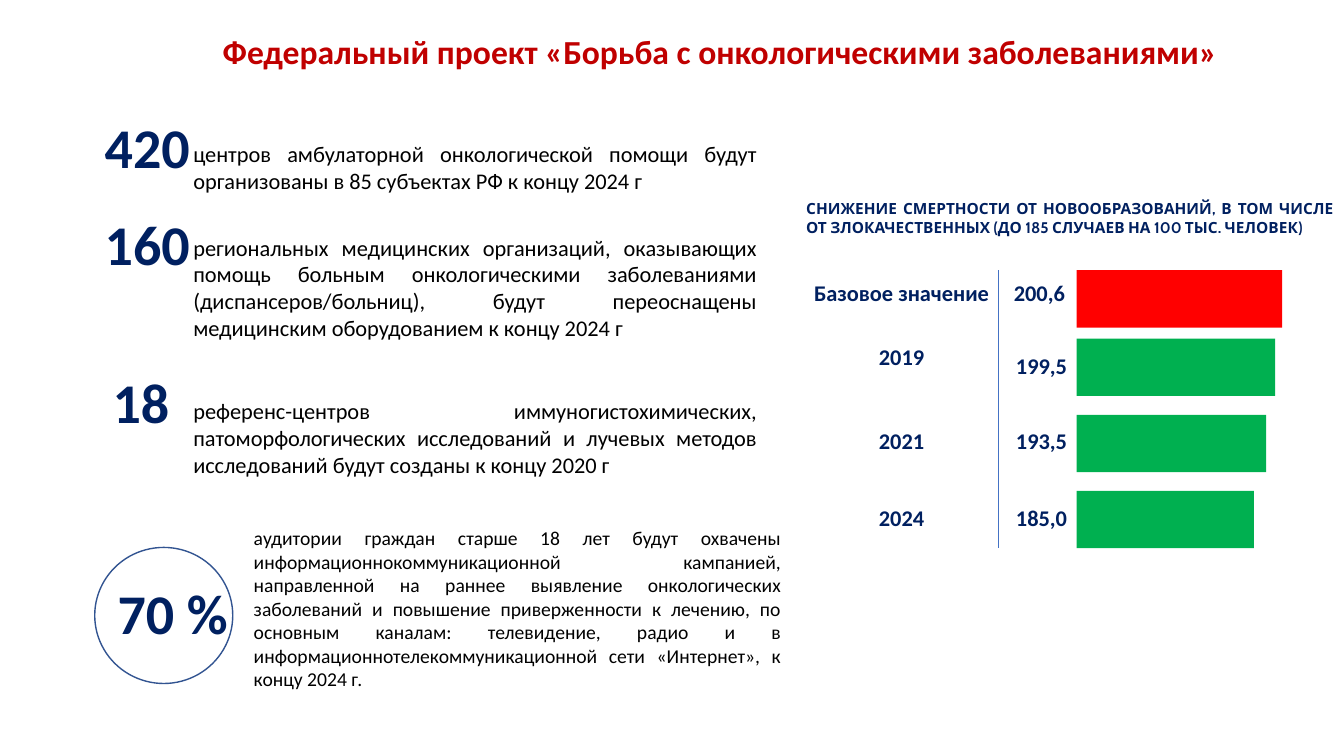
from lxml import etree
from pptx import Presentation
from pptx.dml.color import RGBColor
from pptx.enum.shapes import MSO_CONNECTOR, MSO_SHAPE
from pptx.enum.text import MSO_ANCHOR, MSO_AUTO_SIZE, PP_ALIGN
from pptx.oxml.ns import qn
from pptx.util import Pt

LEFT, CENTER, JUSTIFY = PP_ALIGN.LEFT, PP_ALIGN.CENTER, PP_ALIGN.JUSTIFY
TOP = MSO_ANCHOR.TOP
NO_AUTOFIT = MSO_AUTO_SIZE.NONE
RECTANGLE, CIRCLE = MSO_SHAPE.RECTANGLE, MSO_SHAPE.FLOWCHART_CONNECTOR
STRAIGHT = MSO_CONNECTOR.STRAIGHT

NAVY, BLACK, CRIMSON = "002060", "000000", "C00000"
RED, GREEN, BLUE, RING = "FF0000", "00B050", "4472C4", "325491"


def color(value):
    return RGBColor.from_string(value)


class SlideBuilder:
    """Places styled elements on the current slide, with lengths in points."""

    def __init__(self, slide, font="Calibri"):
        self.slide = slide
        self.font = font

    def set_words(self, box, words, size, ink, bold, align, font=None, wrap=True):
        frame = box.text_frame
        frame.text = words
        frame.word_wrap = wrap
        frame.auto_size = NO_AUTOFIT
        frame.vertical_anchor = TOP
        paragraph = frame.paragraphs[0]
        paragraph.alignment = align
        paragraph.line_spacing = 1.0
        paragraph.font.name = font or self.font
        paragraph.font.size = Pt(size)
        paragraph.font.bold = bold
        paragraph.font.color.rgb = color(ink)

    def title(self, words, left, top, width, height):
        heading = self.slide.shapes.title
        heading.left, heading.top = Pt(left), Pt(top)
        heading.width, heading.height = Pt(width), Pt(height)
        self.set_words(heading, words, 24, CRIMSON, True, CENTER)

    def text(self, words, left, top, width, height, size=16, ink=NAVY,
             bold=True, align=LEFT, font=None, wrap=True):
        box = self.slide.shapes.add_textbox(Pt(left), Pt(top), Pt(width), Pt(height))
        self.set_words(box, words, size, ink, bold, align, font, wrap)

    def shape(self, kind, left, top, width, height, fill=None, outline=None):
        figure = self.slide.shapes.add_shape(kind, Pt(left), Pt(top), Pt(width), Pt(height))
        figure.shadow.inherit = False
        if fill:
            figure.fill.solid()
            figure.fill.fore_color.rgb = color(fill)
        else:
            figure.fill.background()
        if outline:
            figure.line.color.rgb = color(outline)
            figure.line.width = Pt(1)
        else:
            figure.line.fill.background()

    def vertical_line(self, x, top, bottom):
        axis = self.slide.shapes.add_connector(STRAIGHT, Pt(x), Pt(top), Pt(x), Pt(bottom))
        axis.line.color.rgb = color(BLUE)
        axis.line.width = Pt(0.5)
        etree.SubElement(axis.element.spPr, qn("a:effectLst"))


def add_goals(builder):
    goals = [
        ("420", 67.7, 77, 84, "центров амбулаторной онкологической помощи будут "
         "организованы в 85 субъектах РФ к концу 2024 г", 96.5, 46),
        ("160", 67.7, 146.2, 84, "региональных медицинских организаций, оказывающих "
         "помощь больным онкологическими заболеваниями (диспансеров/больниц), "
         "будут переоснащены медицинским оборудованием к концу 2024 г", 163.4, 85),
        ("18", 73.4, 259.2, 55.4, "референс-центров иммуногистохимических, "
         "патоморфологических исследований и лучевых методов исследований "
         "будут созданы к концу 2020 г", 280.1, 65.5),
    ]
    for number, left, number_top, width, goal, goal_top, height in goals:
        builder.text(goal, 131, goal_top, 416.9, height, ink=BLACK, bold=False, align=JUSTIFY)
        builder.text(number, left, number_top, width, 55.4, size=40, align=JUSTIFY)


def add_audience(builder):
    builder.text(
        "аудитории граждан старше 18 лет будут охвачены информационнокоммуникационной "
        "кампанией, направленной на раннее выявление онкологических заболеваний и "
        "повышение приверженности к лечению, по основным каналам: телевидение, радио и "
        "в информационнотелекоммуникационной сети «Интернет», к концу 2024 г.",
        174.2, 372.2, 391, 126, size=14, ink=BLACK, bold=False, align=JUSTIFY)
    builder.shape(CIRCLE, 67.7, 391, 98.6, 97.2, outline=RING)
    builder.text("70 %", 77, 409.7, 93.6, 55.4, size=40, wrap=False)


def add_mortality(builder):
    builder.text("СНИЖЕНИЕ СМЕРТНОСТИ ОТ НОВООБРАЗОВАНИЙ, В ТОМ ЧИСЛЕ ОТ ЗЛОКАЧЕСТВЕННЫХ "
                 "(ДО 185 СЛУЧАЕВ НА 100 ТЫС. ЧЕЛОВЕК)",
                 568.8, 139, 391, 47.5, size=11, align=JUSTIFY, font="Cabin")
    years = [
        ("Базовое значение", "200,6", 193, 195.8, 195.8, 717.1, 146.9, RED),
        ("2019", "199,5", 241.9, 241.9, 247.7, 718.6, 141.8, GREEN),
        ("2021", "193,5", 296.3, 301.7, 301.7, 718.6, 135.4, GREEN),
        ("2024", "185,0", 350.6, 356.4, 356.4, 718.6, 126.7, GREEN),
    ]
    for year, rate, bar_top, year_top, rate_top, rate_left, length, fill in years:
        builder.shape(RECTANGLE, 769, bar_top, length, 41, fill=fill)
        builder.text(year, 568, year_top, 152, 26.6, align=CENTER)
        builder.text(rate, rate_left, rate_top, 51.8, 26.6, wrap=False)
    builder.vertical_line(712.8, 193, 391.7)


def main():
    deck = Presentation()
    deck.slide_width, deck.slide_height = Pt(960), Pt(540)
    builder = SlideBuilder(deck.slides.add_slide(deck.slide_layouts[5]))
    builder.title("Федеральный проект «Борьба с онкологическими заболеваниями»",
                  128.9, 18.7, 771, 36)
    add_mortality(builder)
    add_goals(builder)
    add_audience(builder)
    deck.save("out.pptx")


if __name__ == "__main__":
    main()
